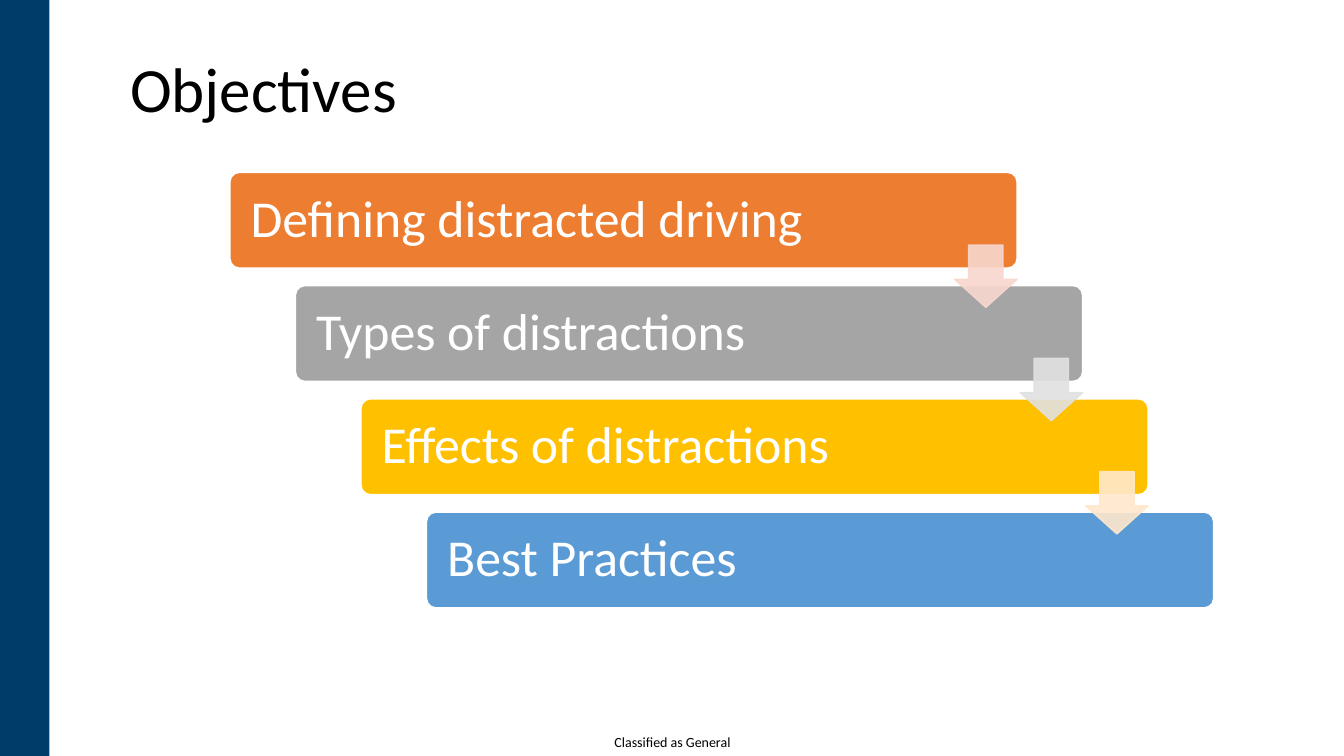
"""Build the Objectives slide: a staircase of four bars joined by arrows."""
from dataclasses import dataclass

from lxml.etree import SubElement
from pptx import Presentation
from pptx.dml.color import RGBColor
from pptx.enum.shapes import MSO_SHAPE
from pptx.enum.text import MSO_ANCHOR, PP_ALIGN
from pptx.oxml.ns import qn
from pptx.util import Pt


@dataclass(frozen=True)
class Theme:
    font: str = "Calibri"
    black: str = "000000"
    white: str = "FFFFFF"
    band: str = "003C69"
    title_size: int = 45
    bar_size: int = 37
    footer_size: int = 10


theme = Theme()


def write(frame, text, size, color, align=PP_ALIGN.LEFT, spacing=0.9, margins=(0, 0, 0, 0), wrap=True):
    frame.word_wrap = wrap
    frame.vertical_anchor = MSO_ANCHOR.MIDDLE
    frame.margin_left, frame.margin_top, frame.margin_right, frame.margin_bottom = map(Pt, margins)
    para = frame.paragraphs[0]
    para.alignment = align
    para.line_spacing = spacing
    span = para.add_run()
    span.text = text
    span.font.name = theme.font
    span.font.size = Pt(size)
    span.font.color.rgb = RGBColor.from_string(color)


def add_block(page, kind, left, top, width, height, fill, line=None, opacity=100):
    shape = page.shapes.add_shape(kind, Pt(left), Pt(top), Pt(width), Pt(height))
    shape.shadow.inherit = False
    shape.fill.solid()
    shape.fill.fore_color.rgb = RGBColor.from_string(fill)
    if line:
        shape.line.width = Pt(1)
        shape.line.color.rgb = RGBColor.from_string(line)
    else:
        shape.line.fill.background()
    if opacity < 100:
        for color in shape.element.spPr.iter(qn("a:srgbClr")):
            SubElement(color, qn("a:alpha"), val=str(opacity * 1000))
    return shape


deck = Presentation()
deck.slide_width, deck.slide_height = Pt(960), Pt(540)
page = deck.slides.add_slide(deck.slide_layouts[5])

footer = page.shapes.add_textbox(Pt(427), Pt(519.1), Pt(106.6), Pt(21))
write(footer.text_frame, "Classified as General", theme.footer_size, theme.black,
      align=PP_ALIGN.CENTER, spacing=1.0, wrap=False)

add_block(page, MSO_SHAPE.RECTANGLE, 0, 0, 35.3, 540, theme.band)

title = page.shapes.title
title.left, title.top, title.width, title.height = Pt(85.7), Pt(37.4), Pt(310.3), Pt(56.9)
write(title.text_frame, "Objectives", theme.title_size, theme.black, margins=(7.2, 3.6, 7.2, 3.6))

bars = [
    ("Defining distracted driving", "ED7D31"),
    ("Types of distractions", "A5A5A5"),
    ("Effects of distractions", "FFC000"),
    ("Best Practices", "5B9BD5"),
]
arrow_colors = ["F8D7CE", "E1E1E1", "FFE8CC"]
first_left, first_top = 164.2, 123.1
step_right, step_down = 46.8, 80.9

for step, (text, fill) in enumerate(bars):
    bar = add_block(page, MSO_SHAPE.ROUNDED_RECTANGLE, first_left + step * step_right,
                    first_top + step * step_down, 562.3, 68.4, fill, line=theme.white)
    bar.adjustments[0] = 0.1
    write(bar.text_frame, text, theme.bar_size, theme.white, margins=(12.8, 10.8, 12.8, 10.8))

for step, fill in enumerate(arrow_colors):
    arrow = add_block(page, MSO_SHAPE.DOWN_ARROW, first_left + 517.7 + step * step_right,
                      first_top + 51.9 + step * step_down, 44.6, 44.6, fill, line=fill, opacity=90)
    arrow.adjustments[0] = 0.55
    arrow.adjustments[1] = 0.45

deck.save("out.pptx")
